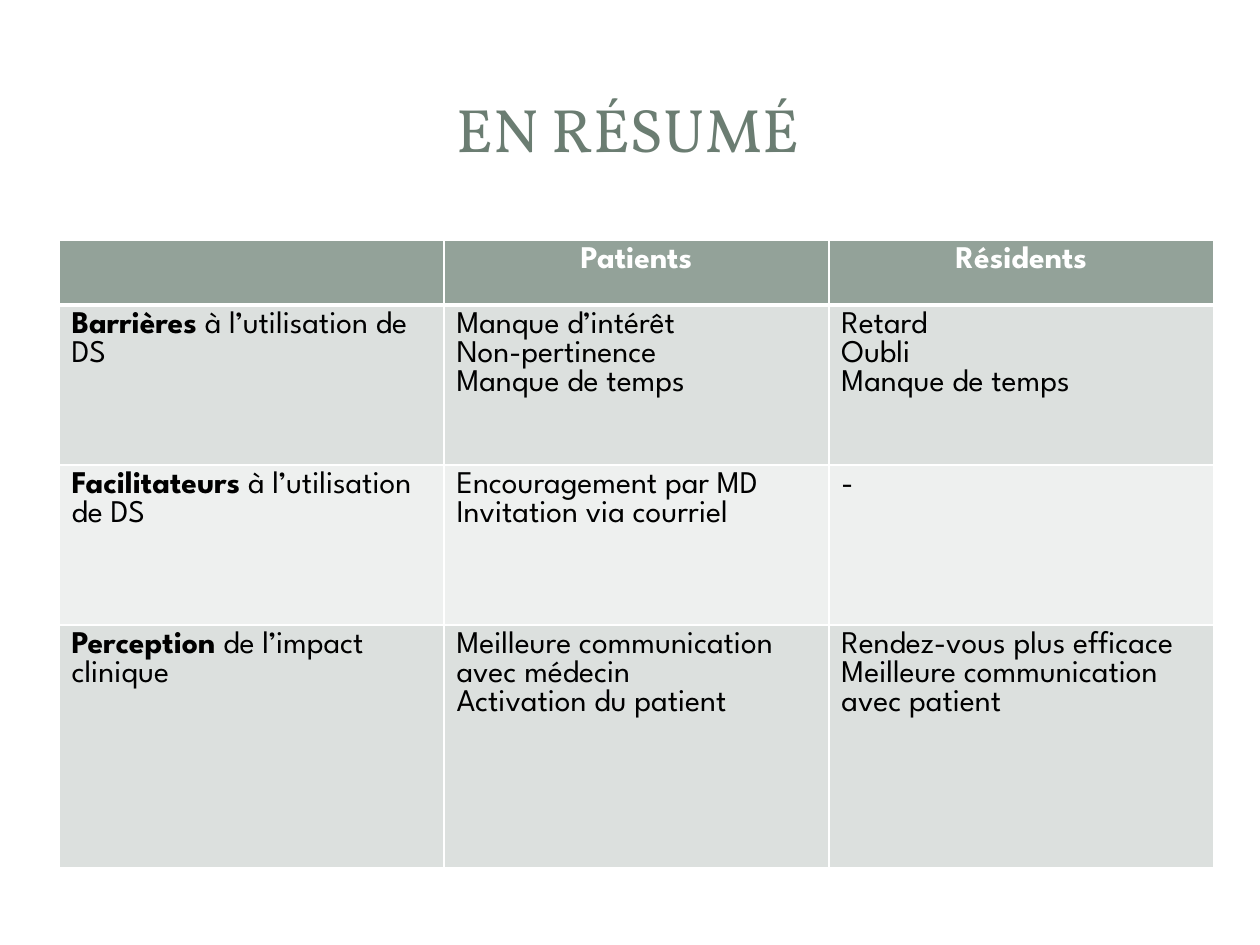
from typing import NamedTuple

from lxml.etree import SubElement
from pptx import Presentation
from pptx.dml.color import RGBColor as RGB
from pptx.enum.shapes import MSO_SHAPE as SHAPE
from pptx.enum.text import MSO_ANCHOR as ANCHOR, PP_ALIGN as ALIGN
from pptx.oxml.ns import qn
from pptx.util import Emu, Pt

PX = 914400 // 126
COLORS = {
    "title": "6B7D72",
    "header": "93A299",
    "dark_band": "DCE0DE",
    "light_band": "EEF0EF",
    "white": "FFFFFF",
    "black": "000000",
}
BODY_FONT = "League Spartan"
COL_WIDTH = 385
HEADERS = ["", "Patients", "Résidents"]
HEADER_HEIGHT = 65


class Panel(NamedTuple):
    kind: SHAPE
    left: int
    top: int
    width: int
    height: int
    opacity: int = 100


class Topic(NamedTuple):
    keyword: str
    rest: str
    patients: list[str]
    residents: list[str]
    height: int


PANELS = [
    Panel(SHAPE.ROUNDED_RECTANGLE, 13, 14, 1235, 919),
    Panel(SHAPE.RECTANGLE, 38, 38, 1184, 183, opacity=83),
    Panel(SHAPE.RECTANGLE, 52, 52, 1155, 154),
]
TOPICS = [
    Topic("Barrières", " à l’utilisation de DS",
          ["Manque d’intérêt", "Non-pertinence", "Manque de temps"],
          ["Retard", "Oubli", "Manque de temps"], 160),
    Topic("Facilitateurs", " à l’utilisation de DS",
          ["Encouragement par MD", "Invitation via courriel"], ["-"], 160),
    Topic("Perception", " de l’impact clinique",
          ["Meilleure communication avec médecin", "Activation du patient"],
          ["Rendez-vous plus efficace", "Meilleure communication avec patient"], 243),
]


def px(n: int) -> Emu:
    return Emu(n * PX)


def add_panel(s, panel: Panel) -> None:
    sp = s.shapes.add_shape(panel.kind, px(panel.left), px(panel.top),
                            px(panel.width), px(panel.height))
    sp.shadow.inherit = False
    sp.line.fill.background()
    sp.fill.solid()
    sp.fill.fore_color.rgb = RGB.from_string(COLORS["white"])
    if panel.kind == SHAPE.ROUNDED_RECTANGLE:
        sp.adjustments[0] = 0.02
    if panel.opacity < 100:
        color = sp._element.spPr.find(f"{qn('a:solidFill')}/{qn('a:srgbClr')}")
        SubElement(color, qn("a:alpha"), val=str(panel.opacity * 1000))


def style_run(r, font: str, size: int, color: str, bold: bool = False) -> None:
    r.font.name, r.font.size, r.font.bold = font, Pt(size), bold
    r.font.color.rgb = RGB.from_string(COLORS[color])


def style_cell(cell, fill: str, top: int = 1, bottom: int = 1) -> None:
    """Draw white borders (widths in points), then fill the cell."""
    tcPr = cell._tc.get_or_add_tcPr()
    for side, width in {"L": 1, "R": 1, "T": top, "B": bottom}.items():
        ln = SubElement(tcPr, qn(f"a:ln{side}"), w=str(Pt(width)))
        SubElement(SubElement(ln, qn("a:solidFill")), qn("a:srgbClr"), val=COLORS["white"])
    cell.fill.solid()
    cell.fill.fore_color.rgb = RGB.from_string(COLORS[fill])


def add_title(s, text: str) -> None:
    tf = s.shapes.add_textbox(px(59), px(56), px(1138), px(144)).text_frame
    tf.word_wrap = True
    tf.vertical_anchor = ANCHOR.MIDDLE
    p = tf.paragraphs[0]
    p.text = text
    p.alignment = ALIGN.CENTER
    style_run(p.runs[0], "Vollkorn", 35, "title")


def fill_header(cell, text: str) -> None:
    style_cell(cell, "header", bottom=3)
    p = cell.text_frame.paragraphs[0]
    p.alignment = ALIGN.CENTER
    if text:
        p.text = text
        style_run(p.runs[0], BODY_FONT, 18, "white", bold=True)


def fill_topic(cells: list, topic: Topic, band: str, top: int) -> None:
    for cell in cells:
        style_cell(cell, band, top=top)
    p = cells[0].text_frame.paragraphs[0]
    for text, bold in ((topic.keyword, True), (topic.rest, False)):
        r = p.add_run()
        r.text = text
        style_run(r, BODY_FONT, 18, "black", bold)
    for cell, lines in zip(cells[1:], (topic.patients, topic.residents)):
        cell.text_frame.text = "\n".join(lines)
        for p in cell.text_frame.paragraphs:
            style_run(p.runs[0], BODY_FONT, 18, "black")


def add_summary_table(s) -> None:
    heights = [HEADER_HEIGHT] + [t.height for t in TOPICS]
    table = s.shapes.add_table(len(heights), len(HEADERS), px(59), px(240),
                               px(COL_WIDTH * len(HEADERS)), px(sum(heights))).table
    for col in table.columns:
        col.width = px(COL_WIDTH)
    for row, height in zip(table.rows, heights):
        row.height = px(height)
    for c, text in enumerate(HEADERS):
        fill_header(table.cell(0, c), text)
    for i, topic in enumerate(TOPICS):
        band = "light_band" if i % 2 else "dark_band"
        cells = [table.cell(i + 1, c) for c in range(len(HEADERS))]
        fill_topic(cells, topic, band, top=1 if i else 3)


def main() -> None:
    prs = Presentation()
    prs.slide_width, prs.slide_height = px(1260), px(945)
    s = prs.slides.add_slide(prs.slide_layouts[6])
    for panel in PANELS:
        add_panel(s, panel)
    add_title(s, "EN RÉSUMÉ")
    add_summary_table(s)
    prs.save("out.pptx")


if __name__ == "__main__":
    main()
